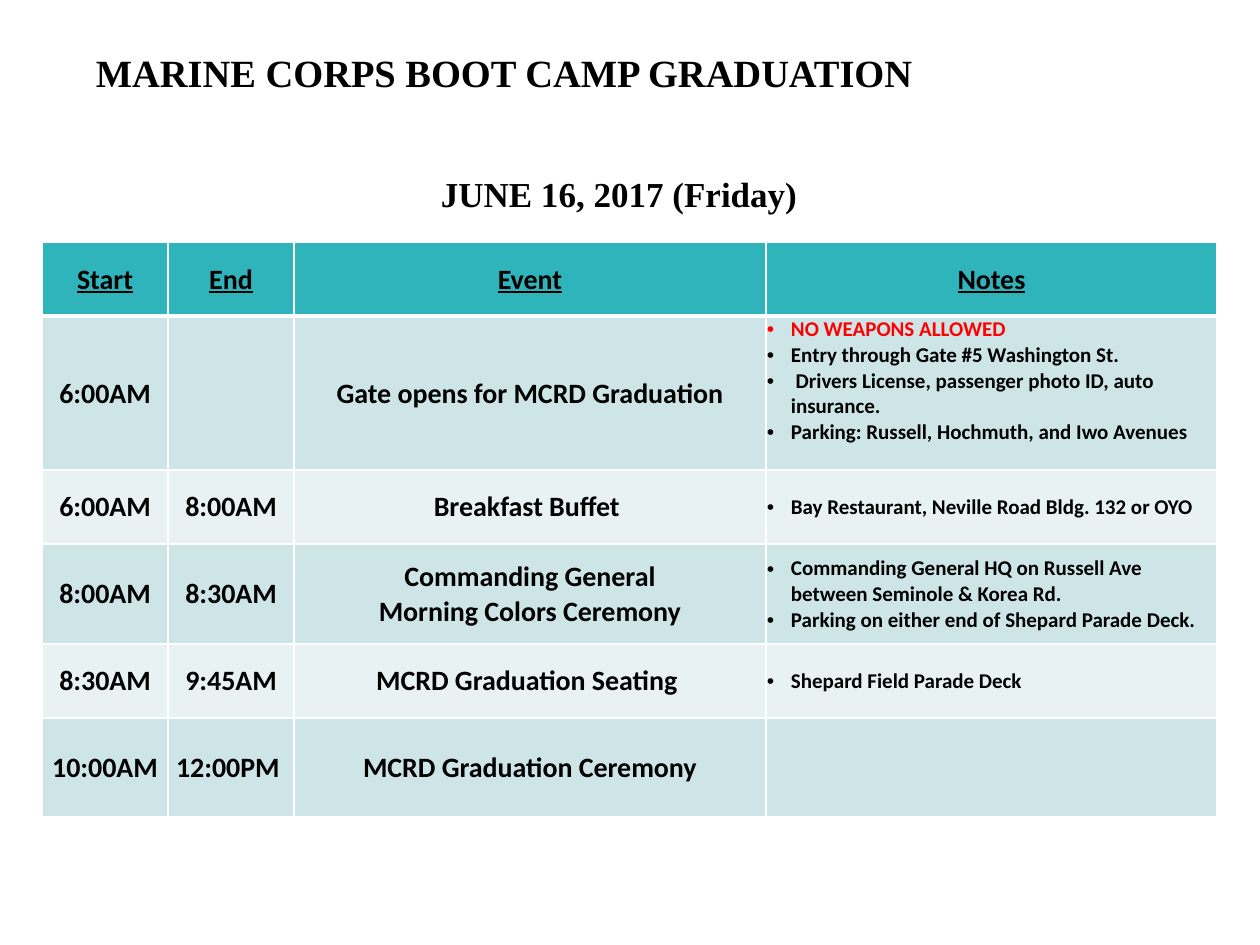
import pptx
import pptx.util
import pptx.dml.color
import pptx.enum.text
import pptx.oxml
import pptx.oxml.ns

PX = 914400 / 126
COLORS = {
    "text": "000000",
    "alert": "FF0000",
    "header": "2FB4BC",
    "band_dark": "CDE5E7",
    "band_light": "E8F2F3",
    "border": "FFFFFF",
}
ALIGN = pptx.enum.text.PP_ALIGN
ANCHOR = pptx.enum.text.MSO_ANCHOR

# Schedule content: start, end, event lines, notes
HEADINGS = ["Start", "End", "Event", "Notes"]
ALERT = "NO WEAPONS ALLOWED"
SCHEDULE = [
    ("6:00AM", "", ["Gate opens for MCRD Graduation"],
     [ALERT,
      "Entry through Gate #5 Washington St.",
      " Drivers License, passenger photo ID, auto insurance.",
      "Parking: Russell, Hochmuth, and Iwo Avenues"]),
    ("6:00AM", "8:00AM", ["Breakfast Buffet "],
     ["Bay Restaurant, Neville Road Bldg. 132 or OYO"]),
    ("8:00AM", "8:30AM", ["Commanding General", "Morning Colors Ceremony"],
     ["Commanding General HQ on Russell Ave between Seminole & Korea Rd.",
      "Parking on either end of Shepard Parade Deck."]),
    ("8:30AM", "9:45AM", ["MCRD Graduation Seating "],
     ["Shepard Field Parade Deck"]),
    ("10:00AM", "12:00PM ", ["MCRD Graduation Ceremony"], []),
]
COLUMN_WIDTHS = [126, 126, 472, 451]
ROW_HEIGHTS = [74, 154, 74, 100, 74, 99]


def emu(px):
    return pptx.util.Emu(round(px * PX))


def set_all(target, values):
    for name, value in values.items():
        setattr(target, name, value)


class SlideBuilder:
    margins = {"margin_left": emu(1), "margin_top": emu(1),
               "margin_right": emu(1), "margin_bottom": 0}
    bullet_indent = 24

    def __init__(self, slide):
        self.slide = slide

    def add_lines(self, frame, lines, size, font="Calibri", align=ALIGN.CENTER,
                  bullet=False, underline=False, spacing=None):
        for index, line in enumerate(lines):
            paragraph = frame.paragraphs[0] if index == 0 else frame.add_paragraph()
            set_all(paragraph, {"alignment": align, "line_spacing": spacing})
            if bullet:
                self.add_bullet(paragraph)
            run = paragraph.add_run()
            run.text = line
            set_all(run.font, {"name": font, "size": pptx.util.Pt(size),
                               "bold": True, "underline": underline})
            color = COLORS["alert" if line == ALERT else "text"]
            run.font.color.rgb = pptx.dml.color.RGBColor.from_string(color)

    def add_bullet(self, paragraph):
        properties = paragraph._p.get_or_add_pPr()
        indent = emu(self.bullet_indent)
        properties.set("marL", str(indent))
        properties.set("indent", str(-indent))
        ns = pptx.oxml.ns.nsdecls("a")
        for xml in (f'<a:buFont {ns} typeface="Arial"/>', f'<a:buChar {ns} char="•"/>'):
            properties.append(pptx.oxml.parse_xml(xml))

    def text(self, left, top, width, height, line, size, anchor=ANCHOR.TOP, **style):
        box = self.slide.shapes.add_textbox(*map(emu, (left, top, width, height)))
        set_all(box.text_frame, {"word_wrap": True, "vertical_anchor": anchor,
                                 "margin_left": 0, "margin_top": 0,
                                 "margin_right": 0, "margin_bottom": 0})
        self.add_lines(box.text_frame, [line], size, "Times New Roman", **style)

    def table(self, left, top, widths, heights):
        frame = self.slide.shapes.add_table(
            len(heights), len(widths), emu(left), emu(top),
            emu(sum(widths)), emu(sum(heights)))
        for column, width in zip(frame.table.columns, widths):
            column.width = emu(width)
        for row, height in zip(frame.table.rows, heights):
            row.height = emu(height)
        return frame.table

    def cell(self, cell, lines, fill, size=16, anchor=ANCHOR.MIDDLE,
             top_line=1, bottom_line=1, **style):
        set_all(cell, {**self.margins, "vertical_anchor": anchor})
        for side, width in zip("LRTB", (1, 1, top_line, bottom_line)):
            cell._tc.get_or_add_tcPr().append(pptx.oxml.parse_xml(
                f'<a:ln{side} {pptx.oxml.ns.nsdecls("a")} w="{pptx.util.Pt(width)}">'
                f'<a:solidFill><a:srgbClr val="{COLORS["border"]}"/></a:solidFill>'
                f'</a:ln{side}>'))
        cell.fill.solid()
        cell.fill.fore_color.rgb = pptx.dml.color.RGBColor.from_string(COLORS[fill])
        self.add_lines(cell.text_frame, lines, size, **style)


def main():
    deck = pptx.Presentation()
    set_all(deck, {"slide_width": emu(1260), "slide_height": emu(945)})
    builder = SlideBuilder(deck.slides.add_slide(deck.slide_layouts[6]))

    # Title
    builder.text(96, 24, 818, 102, "MARINE CORPS BOOT CAMP GRADUATION", 22,
                 anchor=ANCHOR.MIDDLE, align=ALIGN.LEFT, spacing=0.9)

    # Schedule header
    schedule = builder.table(42, 242, COLUMN_WIDTHS, ROW_HEIGHTS)
    for column, heading in enumerate(HEADINGS):
        builder.cell(schedule.cell(0, column), [heading], "header",
                     bottom_line=3, underline=True)

    # Schedule rows in alternating bands
    for row, (start, end, event, notes) in enumerate(SCHEDULE, 1):
        band = "band_dark" if row % 2 else "band_light"
        top_line = 3 if row == 1 else 1
        times = [[time] if time else [] for time in (start, end)]
        for column, lines in enumerate([*times, event]):
            builder.cell(schedule.cell(row, column), lines, band, top_line=top_line)
        builder.cell(schedule.cell(row, 3), notes, band, size=12, top_line=top_line,
                     anchor=ANCHOR.TOP if row == 1 else ANCHOR.MIDDLE,
                     align=ALIGN.LEFT, bullet=True)

    # Date
    builder.text(409, 173, 420, 43, "JUNE 16, 2017 (Friday)", 20)

    deck.save("out.pptx")


if __name__ == "__main__":
    main()
